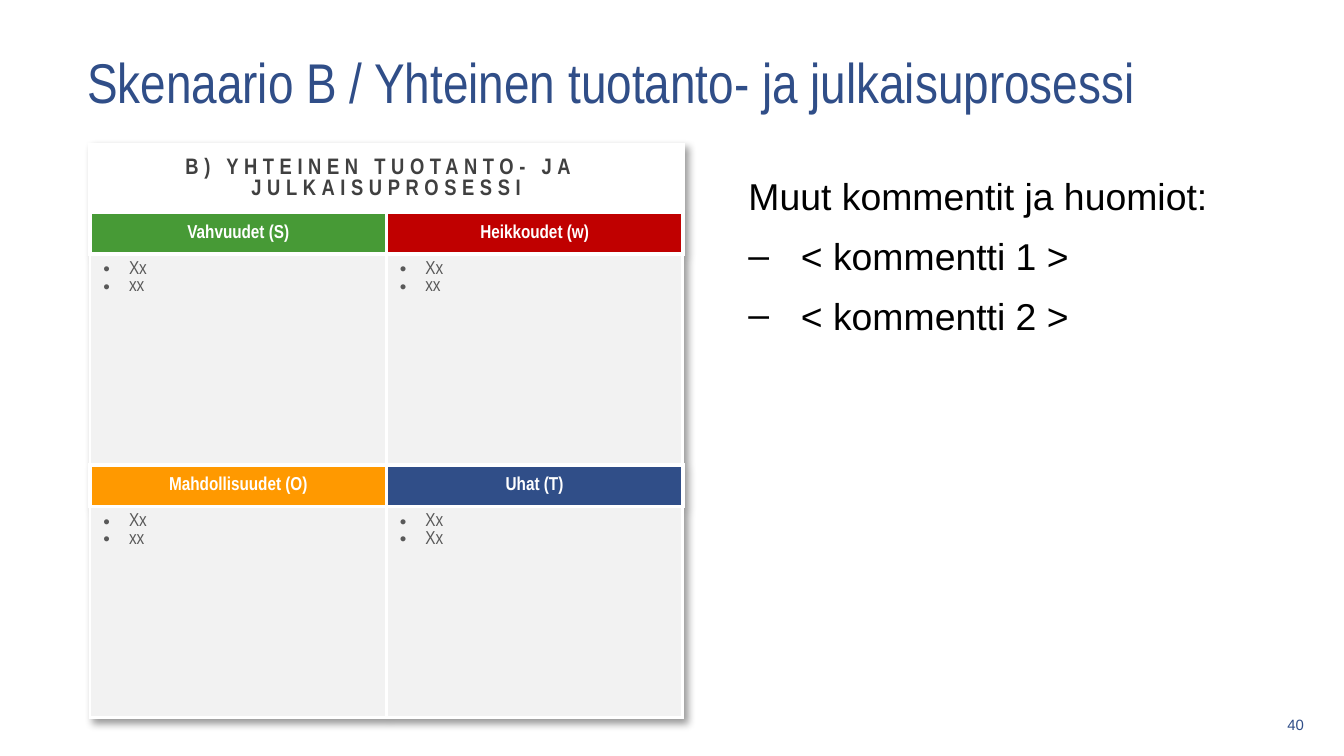
from lxml.etree import SubElement
from pptx import Presentation
from pptx.dml.color import RGBColor
from pptx.enum.text import MSO_ANCHOR, PP_ALIGN
from pptx.oxml import parse_xml
from pptx.oxml.ns import nsdecls, qn
from pptx.util import Inches, Pt

BLACK = RGBColor(0x00, 0x00, 0x00)
WHITE = RGBColor(0xFF, 0xFF, 0xFF)
BLUE = RGBColor(0x30, 0x4E, 0x88)
GREEN = RGBColor(0x47, 0x9A, 0x36)
RED = RGBColor(0xC0, 0x00, 0x00)
ORANGE = RGBColor(0xFF, 0x99, 0x00)
PANEL = RGBColor(0xF2, 0xF2, 0xF2)
DARK_GREY = RGBColor(0x40, 0x40, 0x40)
GREY = RGBColor(0x59, 0x59, 0x59)

SANS = "Arial"
NARROW = "Arial Narrow"
THIN, THICK = 1.5, 2.25

SWOT = [
    [("Vahvuudet (S)", GREEN, ["Xx", "xx"]), ("Heikkoudet (w)", RED, ["Xx", "xx"])],
    [("Mahdollisuudet (O)", ORANGE, ["Xx", "xx"]), ("Uhat (T)", BLUE, ["Xx", "Xx"])],
]


def set_font(para, size, color, name, bold=False):
    para.font.size = Pt(size)
    para.font.color.rgb = color
    para.font.name = name
    para.font.bold = bold


def add_bullet(para, character, indent):
    properties = para._p.get_or_add_pPr()
    properties.set("marL", str(Inches(indent)))
    properties.set("indent", str(-Inches(indent)))
    SubElement(properties, qn("a:buFont")).set("typeface", SANS)
    SubElement(properties, qn("a:buChar")).set("char", character)


def add_text_box(page, left, top, width, height, anchor=MSO_ANCHOR.TOP):
    box = page.shapes.add_textbox(Inches(left), Inches(top), Inches(width), Inches(height))
    box.text_frame.word_wrap = True
    box.text_frame.vertical_anchor = anchor
    return box.text_frame


def add_line(page, place, text, size, color, name, align):
    para = add_text_box(page, *place, MSO_ANCHOR.MIDDLE).paragraphs[0]
    para.text = text
    para.alignment = align
    set_font(para, size, color, name)


def set_borders(cell, left, right, top, bottom):
    properties = cell._tc.get_or_add_tcPr()
    sides = {"lnL": left, "lnR": right, "lnT": top, "lnB": bottom}
    for position, (side, width) in enumerate(sides.items()):
        properties.insert(position, parse_xml(
            f'<a:{side} {nsdecls("a")} w="{Pt(width)}"><a:solidFill>'
            f'<a:srgbClr val="{WHITE}"/></a:solidFill></a:{side}>'))


def fill_cell(cell, color, borders):
    cell.fill.solid()
    cell.fill.fore_color.rgb = color
    set_borders(cell, *borders)


def write_heading(cell, text, size, color):
    cell.vertical_anchor = MSO_ANCHOR.MIDDLE
    para = cell.text_frame.paragraphs[0]
    para.text = text
    para.alignment = PP_ALIGN.CENTER
    set_font(para, size, color, NARROW, bold=True)
    return para


def write_bullets(frame, items, character, indent):
    for index, item in enumerate(items):
        para = frame.add_paragraph() if index else frame.paragraphs[0]
        para.text = item
        add_bullet(para, character, indent)
        set_font(para, 10, GREY, NARROW)


def add_table_shadow(table):
    table._tbl.tblPr.insert(0, parse_xml(
        f'<a:effectLst {nsdecls("a")}><a:outerShdw blurRad="{Pt(4)}" dist="{Pt(3)}" '
        'dir="2700000" algn="tl" rotWithShape="0"><a:srgbClr val="000000">'
        '<a:alpha val="40000"/></a:srgbClr></a:outerShdw></a:effectLst>'))


def add_swot_table(page):
    frame = page.shapes.add_table(5, 2, Inches(0.67), Inches(1.08), Inches(4.41), Inches(4.28))
    table = frame.table
    table.first_row = table.horz_banding = False
    add_table_shadow(table)
    for row, height in zip(table.rows, [0.31, 0.31, 1.57, 0.31, 1.57]):
        row.height = Inches(height)

    # Heading across both columns
    heading = table.cell(0, 0)
    heading.merge(table.cell(0, 1))
    for column in range(2):
        fill_cell(table.cell(0, column), WHITE, [THICK] * 4)
    para = write_heading(heading, "B) YHTEINEN TUOTANTO- JA  JULKAISUPROSESSI", 12, DARK_GREY)
    para.runs[0].font._element.set("spc", "300")

    # Four quadrants: a coloured label above a grey panel
    for band, quadrants in enumerate(SWOT):
        label_row = 1 + 2 * band
        bottom = THIN if band else THICK
        for column, (label, color, items) in enumerate(quadrants):
            label_cell = table.cell(label_row, column)
            left, right = (THIN, THICK) if column else (THICK, THIN)
            fill_cell(label_cell, color, (left, right, THICK, THICK))
            write_heading(label_cell, label, 10, WHITE)
            panel = table.cell(label_row + 1, column)
            fill_cell(panel, PANEL, (THIN, THIN, THICK, bottom))
            write_bullets(panel.text_frame, items, "•", 0.19)


def add_comments(page):
    frame = add_text_box(page, 5.47, 1.24, 3.81, 3.82)
    lines = ["Muut kommentit ja huomiot:", "< kommentti 1 >", "< kommentti 2 >"]
    for index, line in enumerate(lines):
        para = frame.add_paragraph() if index else frame.paragraphs[0]
        para.text = line
        if index:
            add_bullet(para, "‒", 0.39)
        para.space_after = Pt(8)
        set_font(para, 20, BLACK, SANS)


def main():
    # Widescreen page, 16:9
    deck = Presentation()
    deck.slide_width = Inches(10)
    deck.slide_height = Inches(10 * 9 / 16)
    page = deck.slides.add_slide(deck.slide_layouts[6])

    # Title and page number
    add_line(page, (0.55, 0.12, 8.07, 0.97),
             "Skenaario B / Yhteinen tuotanto- ja julkaisuprosessi",
             30, BLUE, NARROW, PP_ALIGN.LEFT)
    add_line(page, (9.28, 5.27, 0.52, 0.24), "40", 8, BLUE, SANS, PP_ALIGN.RIGHT)

    # Analysis and comments
    add_swot_table(page)
    add_comments(page)
    deck.save("out.pptx")


if __name__ == "__main__":
    main()
